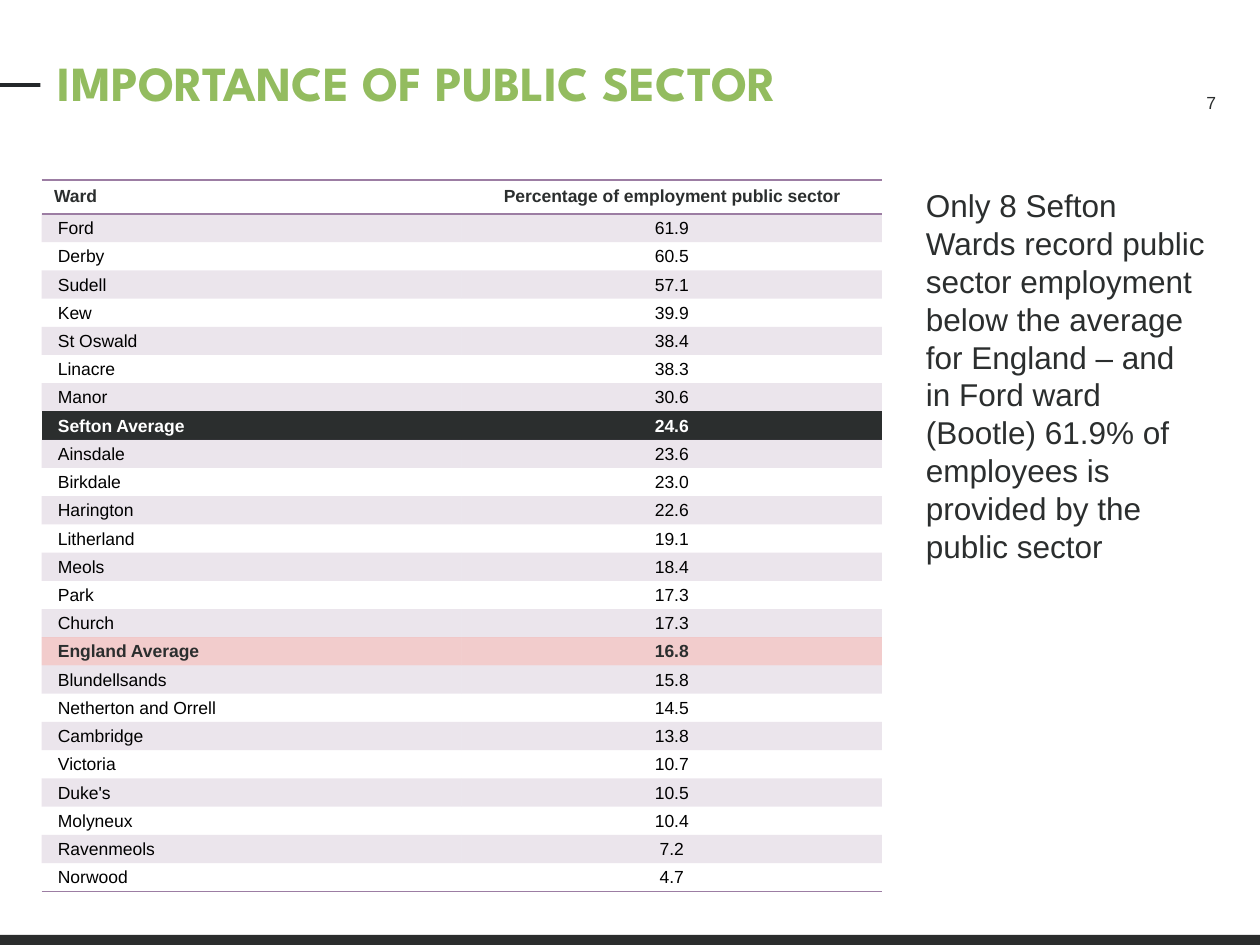
from lxml import etree
from pptx import Presentation
from pptx.dml.color import RGBColor
from pptx.enum.shapes import MSO_SHAPE as Shape
from pptx.enum.text import MSO_ANCHOR as Anchor, PP_ALIGN as Align
from pptx.oxml import parse_xml
from pptx.oxml.ns import nsdecls, qn
from pptx.util import Inches, Pt

INK, PURPLE, GREEN, RED = "2B2E2E", "9C7DA3", "93BC5F", "C00000"
NO_STYLE = "{2D5ABB26-0587-4C30-8999-92F81FD0307C}"


def rgb(value):
    return RGBColor.from_string(value)


def style(paragraph, size, color, bold=False, font="Arial"):
    for run in paragraph.runs:
        run.font.name = font
        run.font.size = Pt(size)
        run.font.bold = bold
        run.font.color.rgb = rgb(color)


prs = Presentation()
prs.slide_width, prs.slide_height = Inches(10), Inches(7.5)
slide = prs.slides.add_slide(prs.slide_layouts[6])

# Title dash and footer band
for left, top, width, height, color in [
    (0, 0.66, 0.32, 0.03, "24272A"),
    (0, 7.42, 10, 0.08, "2B2D2D"),
]:
    bar = slide.shapes.add_shape(
        Shape.RECTANGLE, Inches(left), Inches(top), Inches(width), Inches(height))
    bar.shadow.inherit = False
    bar.fill.solid()
    bar.fill.fore_color.rgb = rgb(color)
    bar.line.fill.background()

# Title
title = slide.shapes.add_textbox(Inches(0.46), Inches(0.42), Inches(7.04), Inches(0.47)).text_frame
title.word_wrap = True
title.margin_left = title.margin_right = title.margin_top = title.margin_bottom = 0
title.text = "IMPORTANCE OF PUBLIC SECTOR"
title.paragraphs[0].line_spacing = Pt(33.6)
style(title.paragraphs[0], 28, GREEN, True, "League Spartan")

# Page number
number = slide.shapes.add_textbox(Inches(7.5), Inches(0.68), Inches(2.25), Inches(0.4)).text_frame
number.word_wrap = True
number.text = "7"
number.paragraphs[0].alignment = Align.RIGHT
style(number.paragraphs[0], 10, INK)

# Ward table
rows = [
    ("Ward", "Percentage of employment public sector"),
    ("Ford", "61.9"), ("Derby", "60.5"), ("Sudell", "57.1"), ("Kew", "39.9"),
    ("St Oswald", "38.4"), ("Linacre", "38.3"), ("Manor", "30.6"),
    ("Sefton Average", "24.6"), ("Ainsdale", "23.6"), ("Birkdale", "23.0"),
    ("Harington", "22.6"), ("Litherland", "19.1"), ("Meols", "18.4"),
    ("Park", "17.3"), ("Church", "17.3"), ("England Average", "16.8"),
    ("Blundellsands", "15.8"), ("Netherton and Orrell", "14.5"),
    ("Cambridge", "13.8"), ("Victoria", "10.7"), ("Duke's", "10.5"),
    ("Molyneux", "10.4"), ("Ravenmeols", "7.2"), ("Norwood", "4.7"),
]
# Highlighted rows: fill, opacity in percent, text colour
highlights = {"Ward": (None, 100, INK), "Sefton Average": (INK, 100, "FFFFFF"),
              "England Average": (RED, 20, INK)}
last = len(rows) - 1
header_height, body_height = Inches(0.25), Inches(5.38)

wards = slide.shapes.add_table(
    len(rows), 2, Inches(0.33), Inches(1.43), Inches(6.67), header_height + body_height).table
wards.horz_banding = False
wards._tbl.tblPr.find(qn("a:tableStyleId")).text = NO_STYLE

for r, row in enumerate(rows):
    wards.rows[r].height = body_height // last if r else header_height
    band = PURPLE if r % 2 else None
    fill, opacity, color = highlights.get(row[0], (band, 20, "000000"))
    # Rules above and below the header and under the last row
    edges = {0: ("lnT", "lnB"), last: ("lnB",)}.get(r, ())
    for c, value in enumerate(row):
        cell = wards.cell(r, c)
        cell.text = value
        paragraph = cell.text_frame.paragraphs[0]
        style(paragraph, 10, color, row[0] in highlights)
        if r:
            cell.vertical_anchor = Anchor.MIDDLE
            cell.margin_left = cell.margin_right = cell.margin_top = Inches(0.01)
            cell.margin_bottom = 0
        if c:
            paragraph.alignment = Align.CENTER
        elif r:
            paragraph._p.get_or_add_pPr().set("marL", str(Inches(0.12)))
        for edge in edges:
            cell._tc.get_or_add_tcPr().append(parse_xml(
                f'<a:{edge} {nsdecls("a")} w="12700"><a:solidFill>'
                f'<a:srgbClr val="{PURPLE}"/></a:solidFill></a:{edge}>'))
        if fill:
            cell.fill.solid()
            cell.fill.fore_color.rgb = rgb(fill)
            if opacity < 100:
                swatch = cell._tc.tcPr.find(qn("a:solidFill"))[0]
                etree.SubElement(swatch, qn("a:alpha")).set("val", str(opacity * 1000))
        else:
            cell.fill.background()

# Commentary
comment = slide.shapes.add_textbox(Inches(7.25), Inches(1.43), Inches(2.42), Inches(3.13)).text_frame
comment.word_wrap = True
comment.text = ("Only 8 Sefton Wards record public sector employment below the average "
                "for England – and in Ford ward (Bootle) 61.9% of employees is provided "
                "by the public sector")
comment.paragraphs[0].line_spacing = Pt(21.6)
style(comment.paragraphs[0], 18, INK)

prs.save("out.pptx")
